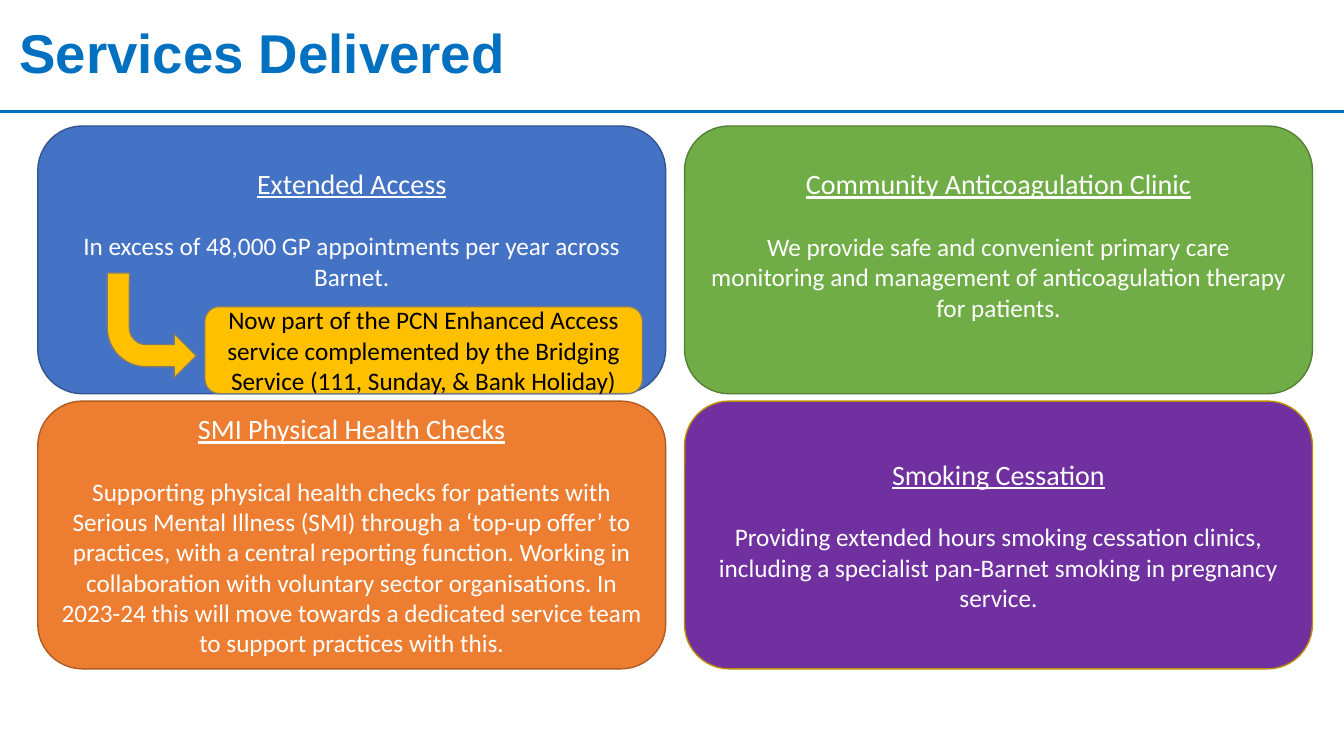
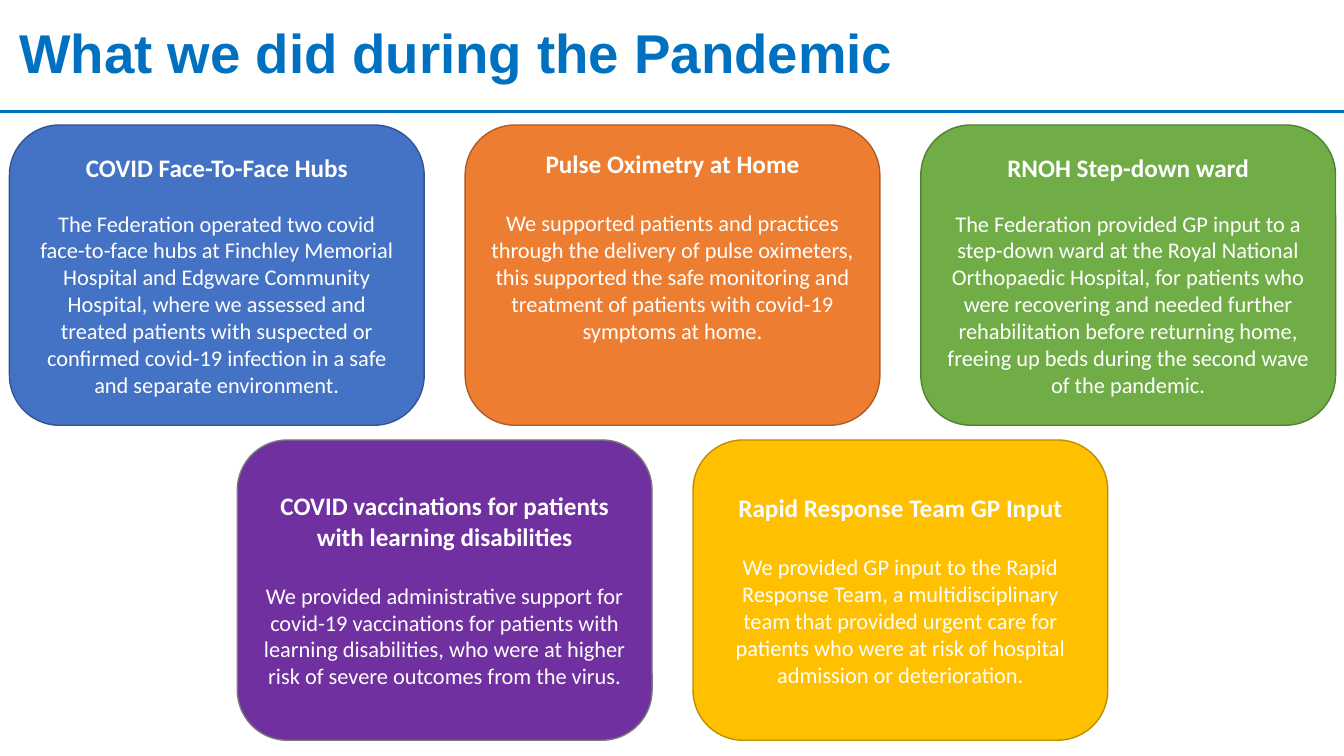
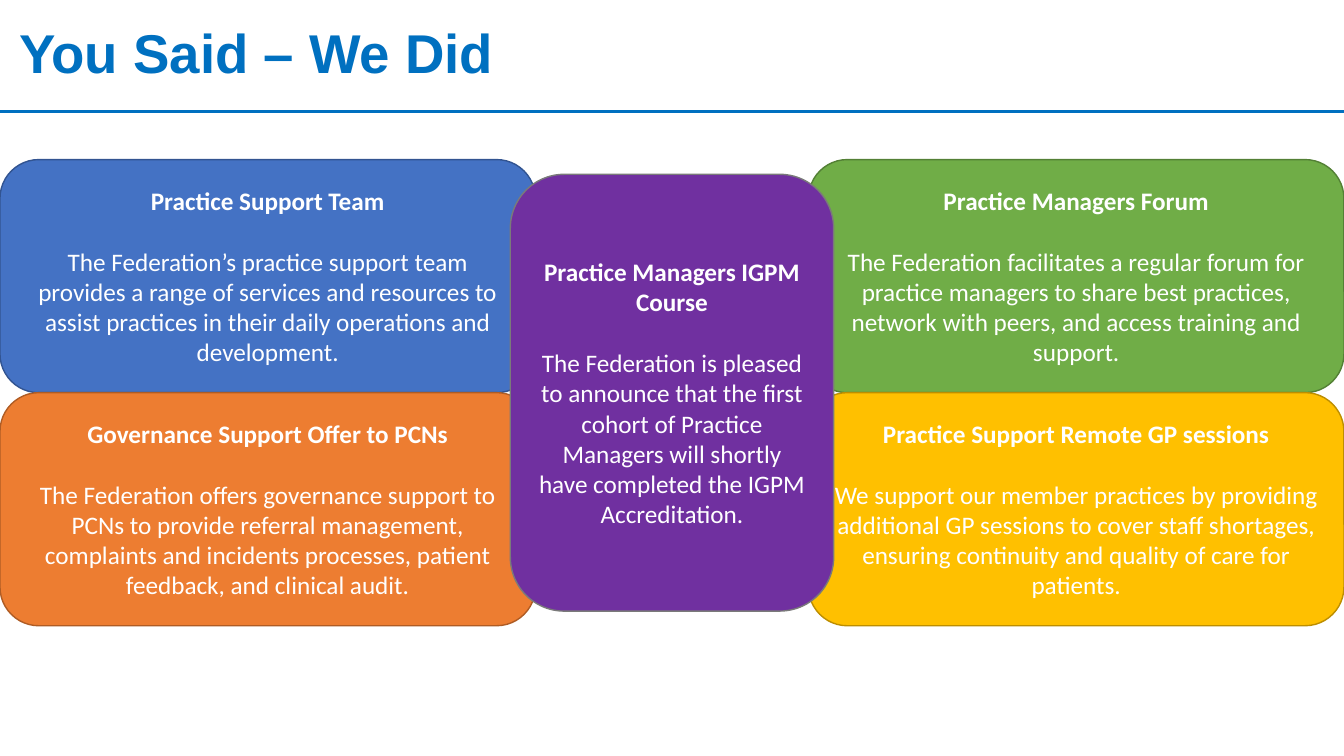
from dataclasses import dataclass

from lxml import etree
from pptx import Presentation
from pptx.dml.color import RGBColor
from pptx.enum.shapes import MSO_CONNECTOR, MSO_SHAPE
from pptx.enum.text import MSO_ANCHOR, PP_ALIGN
from pptx.oxml.ns import qn
from pptx.util import Emu, Pt

ROUNDED = MSO_SHAPE.ROUNDED_RECTANGLE
BENT_ARROW = MSO_SHAPE.BENT_ARROW
STRAIGHT = MSO_CONNECTOR.STRAIGHT
MIDDLE = MSO_ANCHOR.MIDDLE
LEFT, CENTER = PP_ALIGN.LEFT, PP_ALIGN.CENTER
EMU_PER_PX = 9525
SLIDE_W, SLIDE_H = 1280, 720


@dataclass(frozen=True)
class Theme:
    """Colours, fonts and type sizes; a tone is a fill with its outline."""

    title_font: str = "Arial"
    body_font: str = "Calibri"
    accent: str = "0070C0"
    white: str = "FFFFFF"
    black: str = "000000"
    blue: tuple = ("4472C4", "325491")
    green: tuple = ("70AD47", "538035")
    orange: tuple = ("ED7D31", "AF5C24")
    gold: tuple = ("FFC000", "BD8E00")
    gold_grey: tuple = ("FFC000", "7A7A7A")
    purple: tuple = ("7030A0", "7A7A7A")
    purple_gold: tuple = ("7030A0", "BD8E00")
    title: int = 39
    large: int = 20
    medium: int = 18
    small: int = 16
    line_height: float = 1.22
    rule: float = 2.25
    outline: int = 1


THEME = Theme()


@dataclass(frozen=True)
class CardStyle:
    """Type treatment of the cards on one slide."""

    heading_size: int
    body_size: int
    bold: bool = False
    underline: bool = False


@dataclass(frozen=True)
class Card:
    """Content of one card, the size of its gap and the px kept free below."""

    tone: tuple
    heading: str
    body: str
    gap_size: int = THEME.medium
    free_below: int = 0


def px(length):
    """Turn px into EMU."""
    return Emu(length * EMU_PER_PX)


def grid(left, top, width, height, step_x, step_y, columns, rows):
    """List the boxes of a regular grid, row by row."""
    return [(left + column * step_x, top + row * step_y, width, height)
            for row in range(rows) for column in range(columns)]


def write(paragraph, text, size, color, font=THEME.body_font, bold=False,
          underline=False, align=CENTER):
    """Fill a paragraph and format its text."""
    paragraph.text = text
    paragraph.alignment = align
    face = paragraph.runs[0].font
    face.name, face.size = font, Pt(size)
    face.bold, face.underline = bold, underline
    face.color.rgb = RGBColor.from_string(color)


def add_block(slide, preset, box, tone):
    """Draw a filled and outlined preset shape."""
    block = slide.shapes.add_shape(preset, *map(px, box))
    fill, outline = tone
    block.shadow.inherit = False
    block.fill.solid()
    block.fill.fore_color.rgb = RGBColor.from_string(fill)
    block.line.color.rgb = RGBColor.from_string(outline)
    block.line.width = Pt(THEME.outline)
    block.text_frame.word_wrap = True
    block.text_frame.vertical_anchor = MIDDLE
    return block


def add_card(slide, box, card, style):
    """Draw a rounded card with a heading above its description."""
    frame = add_block(slide, ROUNDED, box, card.tone).text_frame
    frame.margin_bottom = px(5 + card.free_below)
    write(frame.paragraphs[0], card.heading, style.heading_size, THEME.white,
          bold=style.bold, underline=style.underline)
    description = frame.add_paragraph()
    description.space_before = Pt(card.gap_size * THEME.line_height)
    write(description, card.body, style.body_size, THEME.white)


def add_cards(slide, boxes, cards, style):
    """Place one card in each box."""
    for box, card in zip(boxes, cards):
        add_card(slide, box, card, style)


def add_titled_slide(deck, title):
    """Add a blank slide with the shared title and rule."""
    slide = deck.slides.add_slide(deck.slide_layouts[6])
    rule = slide.shapes.add_connector(STRAIGHT, 0, px(106), px(SLIDE_W), px(106))
    rule.line.color.rgb = RGBColor.from_string(THEME.accent)
    rule.line.width = Pt(THEME.rule)
    etree.SubElement(rule._element.spPr, qn("a:effectLst"))
    frame = slide.shapes.add_textbox(px(9), 0, px(995), px(106)).text_frame
    frame.word_wrap = True
    frame.vertical_anchor = MIDDLE
    heading = frame.paragraphs[0]
    heading.line_spacing = 0.9
    write(heading, title, THEME.title, THEME.accent, THEME.title_font,
          bold=True, align=LEFT)
    return slide


def build_services(deck):
    """Build the slide of delivered services."""
    slide = add_titled_slide(deck, "Services Delivered")
    services = [
        Card(THEME.blue, "Extended Access",
             "In excess of 48,000 GP appointments per year across Barnet.",
             free_below=59),
        Card(THEME.green, "Community Anticoagulation Clinic",
             "We provide safe and convenient primary care monitoring and "
             "management of anticoagulation therapy for patients.",
             free_below=29),
        Card(THEME.orange, "SMI Physical Health Checks",
             "Supporting physical health checks for patients with Serious "
             "Mental Illness (SMI) through a ‘top-up offer’ to practices, with "
             "a central reporting function. Working in collaboration with "
             "voluntary sector organisations. In 2023-24 this will move "
             "towards a dedicated service team to support practices with this."),
        Card(THEME.purple_gold, "Smoking Cessation",
             "Providing extended hours smoking cessation clinics, including a "
             "specialist pan-Barnet smoking in pregnancy service."),
    ]
    add_cards(slide, grid(36, 120, 598, 255, 616, 262, 2, 2), services,
              CardStyle(THEME.large, THEME.medium, underline=True))
    arrow = add_block(slide, BENT_ARROW, (102, 260, 85, 100), THEME.gold_grey)
    arrow.rotation = 180
    arrow._element.spPr.get_or_add_xfrm().set("flipH", "1")
    update = add_block(slide, ROUNDED, (195, 292, 417, 83), THEME.gold_grey)
    write(update.text_frame.paragraphs[0],
          "Now part of the PCN Enhanced Access service complemented by the "
          "Bridging Service (111, Sunday, & Bank Holiday)",
          THEME.medium, THEME.black)


def build_pandemic(deck):
    """Build the slide of work during the pandemic."""
    slide = add_titled_slide(deck, "What we did during the Pandemic")
    projects = [
        Card(THEME.blue, "COVID Face-To-Face Hubs",
             "The Federation operated two covid face-to-face hubs at Finchley "
             "Memorial Hospital and Edgware Community Hospital, where we "
             "assessed and treated patients with suspected or confirmed "
             "covid-19 infection in a safe and separate environment.",
             gap_size=THEME.small),
        Card(THEME.orange, "Pulse Oximetry at Home",
             "We supported patients and practices through the delivery of "
             "pulse oximeters, this supported the safe monitoring and "
             "treatment of patients with covid-19 symptoms at home.",
             free_below=55),
        Card(THEME.green, "RNOH Step-down ward",
             "The Federation provided GP input to a step-down ward at the "
             "Royal National Orthopaedic Hospital, for patients who were "
             "recovering and needed further rehabilitation before returning "
             "home, freeing up beds during the second wave of the pandemic.",
             gap_size=THEME.small),
        Card(THEME.purple,
             "COVID vaccinations for patients with learning disabilities",
             "We provided administrative support for covid-19 vaccinations for "
             "patients with learning disabilities, who were at higher risk of "
             "severe outcomes from the virus."),
        Card(THEME.gold, "Rapid Response Team GP Input",
             "We provided GP input to the Rapid Response Team, a "
             "multidisciplinary team that provided urgent care for patients "
             "who were at risk of hospital admission or deterioration."),
    ]
    width, height, step = 395, 286, 434
    upper = grid(9, 119, width, height, step, 0, 3, 1)
    lower = grid(9 + step // 2, 419, width, height, step, 0, 2, 1)
    add_cards(slide, upper + lower, projects,
              CardStyle(THEME.medium, THEME.small, bold=True))


def build_feedback(deck):
    """Build the slide of responses to feedback."""
    slide = add_titled_slide(deck, "You Said – We Did")
    responses = [
        Card(THEME.blue, "Practice Support Team",
             "The Federation’s practice support team provides a range of "
             "services and resources to assist practices in their daily "
             "operations and development."),
        Card(THEME.green, "Practice Managers Forum",
             "The Federation facilitates a regular forum for practice managers "
             "to share best practices, network with peers, and access training "
             "and support."),
        Card(THEME.orange, "Governance Support Offer to PCNs",
             "The Federation offers governance support to PCNs to provide "
             "referral management, complaints and incidents processes, patient "
             "feedback, and clinical audit."),
        Card(THEME.gold, "Practice Support Remote GP sessions",
             "We support our member practices by providing additional GP "
             "sessions to cover staff shortages, ensuring continuity and "
             "quality of care for patients."),
        Card(THEME.purple, "Practice Managers IGPM Course",
             "The Federation is pleased to announce that the first cohort of "
             "Practice Managers will shortly have completed the IGPM "
             "Accreditation."),
    ]
    width, height = 510, 222
    corners = grid(0, 152, width, height, SLIDE_W - width, height, 2, 2)
    add_cards(slide, corners + [(486, 166, 308, 416)], responses,
              CardStyle(THEME.medium, THEME.medium, bold=True))


def main():
    """Build and save the deck."""
    deck = Presentation()
    deck.slide_width, deck.slide_height = px(SLIDE_W), px(SLIDE_H)
    build_services(deck)
    build_pandemic(deck)
    build_feedback(deck)
    deck.save("out.pptx")


if __name__ == "__main__":
    main()
